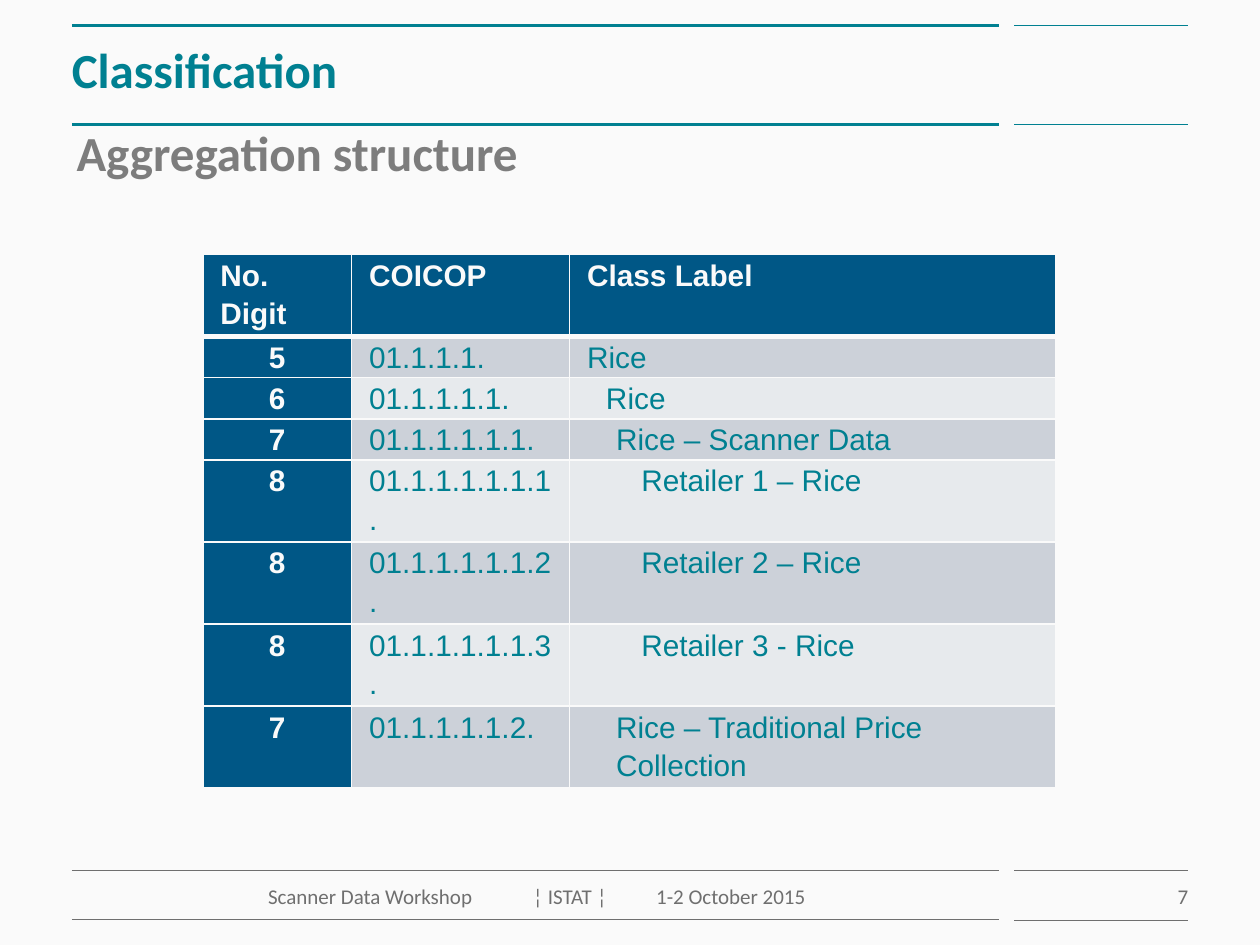
from lxml import etree
from pptx import Presentation
from pptx.dml.color import RGBColor
from pptx.enum.shapes import MSO_CONNECTOR
from pptx.enum.text import MSO_ANCHOR, MSO_AUTO_SIZE, PP_ALIGN
from pptx.oxml.ns import qn
from pptx.util import Inches, Pt

LEFT, CENTER, RIGHT = PP_ALIGN.LEFT, PP_ALIGN.CENTER, PP_ALIGN.RIGHT
TOP, MIDDLE = MSO_ANCHOR.TOP, MSO_ANCHOR.MIDDLE
STRAIGHT = MSO_CONNECTOR.STRAIGHT
NO_FIT, GROW = MSO_AUTO_SIZE.NONE, MSO_AUTO_SIZE.SHAPE_TO_FIT_TEXT

TEAL = RGBColor(0x00, 0x80, 0x91)
NAVY = RGBColor(0x00, 0x57, 0x86)
OFF_WHITE = RGBColor(0xFA, 0xFA, 0xFA)
DARK_GRAY = RGBColor(0x6F, 0x6F, 0x6F)
MID_GRAY = RGBColor(0x7D, 0x7D, 0x7D)
BANDS = [RGBColor(0xCC, 0xD1, 0xD9), RGBColor(0xE7, 0xEA, 0xED)]


def set_text(tf, text, size=12, font="Calibri", color=DARK_GRAY, bold=False,
             align=LEFT, anchor=TOP, insets=None, wrap=True, fit=NO_FIT):
    """Write one formatted paragraph; insets are left, top, right, bottom."""
    tf.word_wrap = wrap
    tf.auto_size = fit
    tf.vertical_anchor = anchor
    if insets:
        (tf.margin_left, tf.margin_top,
         tf.margin_right, tf.margin_bottom) = [Inches(v) for v in insets]
    p = tf.paragraphs[0]
    p.alignment = align
    r = p.add_run()
    r.text = text
    r.font.size, r.font.name, r.font.bold = Pt(size), font, bold
    r.font.color.rgb = color
    return p


def add_border(cell, side, width):
    ln = etree.SubElement(cell._tc.get_or_add_tcPr(), qn("a:ln" + side),
                          w=str(Pt(width)))
    fill = etree.SubElement(ln, qn("a:solidFill"))
    etree.SubElement(fill, qn("a:srgbClr"), val=str(OFF_WHITE))


prs = Presentation()
prs.slide_width, prs.slide_height = Inches(10), Inches(7.5)
s = prs.slides.add_slide(prs.slide_layouts[5])
s.background.fill.solid()
s.background.fill.fore_color.rgb = OFF_WHITE

# Header and footer rules: a long and a short one at each height
for y, color, long_width, short_width in [
        (0.2, TEAL, 1.5, 0.75), (0.99, TEAL, 1.5, 0.75),
        (6.91, DARK_GRAY, 0.75, 0.25), (7.3, DARK_GRAY, 0.75, 0.25)]:
    for x1, x2, width in [(0.57, 7.93, long_width), (8.05, 9.43, short_width)]:
        line = s.shapes.add_connector(STRAIGHT, Inches(x1), Inches(y),
                                      Inches(x2), Inches(y))
        line.line.color.rgb = color
        line.line.width = Pt(width)
        etree.SubElement(line._element.spPr, qn("a:effectLst"))

# Title and subtitle
title = s.shapes.title
title.left, title.top = Inches(0.57), Inches(0.2)
title.width, title.height = Inches(7.36), Inches(0.79)
set_text(title.text_frame, "Classification", size=28, color=TEAL, bold=True,
         anchor=MIDDLE, insets=(0, 0, 0, 0.1))

subtitle = s.shapes.add_textbox(Inches(0.51), Inches(0.92),
                                Inches(3.75), Inches(0.57))
set_text(subtitle.text_frame, "Aggregation structure", size=28,
         color=MID_GRAY, bold=True, wrap=False, fit=GROW)

# Classification table
INDENTS = {"5": 0, "6": 0.15, "7": 0.23, "8": 0.43}
rows = [
    ("No. Digit", "COICOP", "Class Label"),
    ("5", "01.1.1.1.", "Rice"),
    ("6", "01.1.1.1.1.", "Rice"),
    ("7", "01.1.1.1.1.1.", "Rice – Scanner Data"),
    ("8", "01.1.1.1.1.1.1.", "Retailer 1 – Rice"),
    ("8", "01.1.1.1.1.1.2.", "Retailer 2 – Rice"),
    ("8", "01.1.1.1.1.1.3.", "Retailer 3 - Rice"),
    ("7", "01.1.1.1.1.2.", "Rice – Traditional Price Collection"),
]
table = s.shapes.add_table(len(rows), 3, Inches(1.61), Inches(2.02),
                           Inches(6.77), Inches(2.61)).table
for column, width in zip(table.columns, (1.18, 1.73, 3.86)):
    column.width = Inches(width)
for i, values in enumerate(rows):
    table.rows[i].height = Inches(0.31)
    for j, value in enumerate(values):
        cell = table.cell(i, j)
        strong = i == 0 or j == 0
        cell.margin_left = cell.margin_right = Inches(0.14)
        cell.margin_top = cell.margin_bottom = 0
        p = set_text(cell.text_frame, value, size=17, font="Arial",
                     color=OFF_WHITE if strong else TEAL, bold=strong,
                     align=CENTER if i and j == 0 else LEFT)
        p.line_spacing = 1.15
        if i and j == 2:
            p._p.get_or_add_pPr().set("marL", str(Inches(INDENTS[values[0]])))
        for side in "LRTB":
            below_header = (i, side) in [(0, "B"), (1, "T")]
            add_border(cell, side, 3 if below_header else 1)
        cell.fill.solid()
        cell.fill.fore_color.rgb = NAVY if strong else BANDS[(i - 1) % 2]

# Footer and page number
footer = s.shapes.add_textbox(Inches(0.59), Inches(6.91),
                              Inches(7.34), Inches(0.39))
p = set_text(footer.text_frame,
             "Scanner Data Workshop\t¦ ISTAT ¦\t1-2 October 2015",
             align=CENTER, insets=(0, 0.1, 0, 0))
tabs = etree.SubElement(p._p.get_or_add_pPr(), qn("a:tabLst"))
for position in (2.1, 3.08):
    etree.SubElement(tabs, qn("a:tab"), pos=str(Inches(position)), algn="l")

number = s.shapes.add_textbox(Inches(8.05), Inches(6.91),
                              Inches(1.38), Inches(0.39))
set_text(number.text_frame, "7", align=RIGHT, insets=(0, 0.1, 0, 0))

prs.save("out.pptx")
